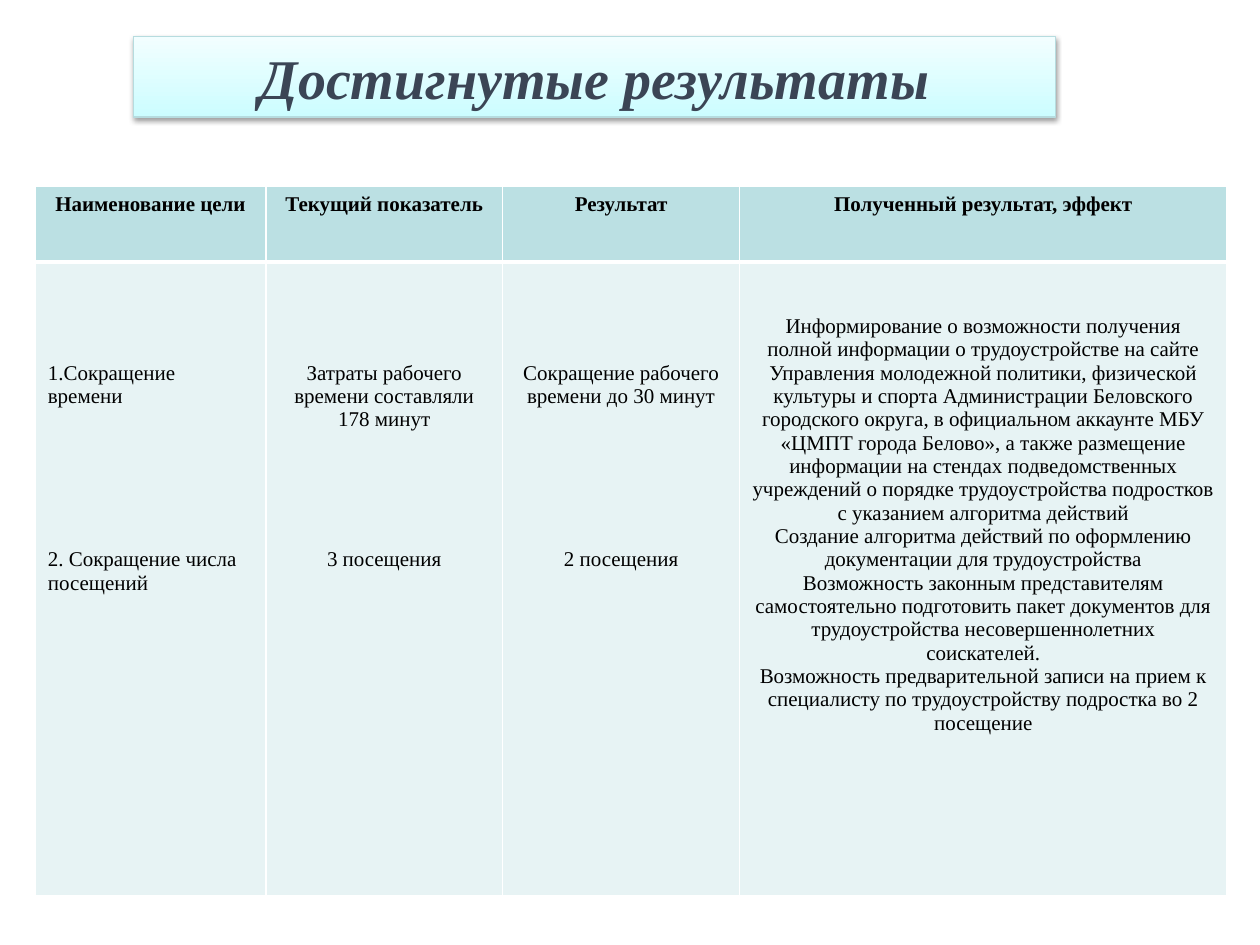
from lxml.etree import SubElement
from pptx import Presentation
from pptx.dml.color import RGBColor
from pptx.enum.shapes import MSO_SHAPE as Shape
from pptx.enum.text import MSO_ANCHOR as Anchor, PP_ALIGN as Align
from pptx.oxml.ns import qn
from pptx.util import Inches, Pt

FONT = "Times New Roman"
COLUMNS = (1.83, 1.88, 1.88, 3.87)
ROWS = (0.6, 5.03)
HEADERS = ("Наименование цели", "Текущий показатель", "Результат", "Полученный результат, эффект")
GOALS = (
    (Align.LEFT, 0.79, 80, ("1.Сокращение времени", "2. Сокращение числа посещений")),
    (Align.CENTER, 0.79, 66.7, ("Затраты рабочего времени составляли 178 минут", "3 посещения")),
    (Align.CENTER, 0.79, 80, ("Сокращение рабочего времени до 30 минут", "2 посещения")),
    (Align.CENTER, 0.42, 0, (
        "Информирование о возможности получения полной информации о трудоустройстве на сайте "
        "Управления молодежной политики, физической культуры и спорта Администрации Беловского "
        "городского округа, в официальном аккаунте МБУ «ЦМПТ города Белово», а также размещение "
        "информации на стендах подведомственных учреждений о порядке трудоустройства подростков "
        "с указанием алгоритма действий",
        "Создание алгоритма действий по оформлению документации для трудоустройства",
        "Возможность законным представителям самостоятельно подготовить пакет документов для "
        "трудоустройства несовершеннолетних соискателей.",
        "Возможность предварительной записи на прием к специалисту по трудоустройству подростка "
        "во 2 посещение")),
)


def color(value):
    return RGBColor.from_string(value)


def style(para, size, ink, bold=False, italic=False, align=Align.CENTER):
    para.alignment = align
    for span in para.runs:
        font = span.font
        font.name, font.size, font.bold, font.italic = FONT, Pt(size), bold, italic
        font.color.rgb = color(ink)


def add_shadow(shape):
    shape.shadow.inherit = False
    effects = shape._element.spPr.find(qn("a:effectLst"))
    shadow = SubElement(effects, qn("a:outerShdw"), blurRad=str(Pt(3.1)), dist=str(Pt(1.6)),
                        dir="5400000", rotWithShape="0")
    ink = SubElement(shadow, qn("a:srgbClr"), val="000000")
    SubElement(ink, qn("a:alpha"), val="38000")


def add_title(page, left, top, width, height):
    box = page.shapes.add_shape(Shape.RECTANGLE, *map(Inches, (left, top, width, height)))
    box.fill.gradient()
    box.fill.gradient_angle = 270
    for stop, shade in zip(box.fill.gradient_stops, ("F2FEFF", "CCFDFF")):
        stop.color.rgb = color(shade)
    for stop, position in zip(box.fill.gradient_stops, (0, 1)):
        stop.position = position
    box.line.color.rgb = color("B6DCDF")
    box.line.width = Pt(0.75)
    add_shadow(box)
    frame = box.text_frame
    frame.word_wrap = False
    frame.vertical_anchor = Anchor.MIDDLE
    frame.text = "Достигнутые результаты"
    style(frame.paragraphs[0], 32, "3B4555", bold=True, italic=True)


def paint_cell(cell, shade, bottom=1):
    properties = cell._tc.get_or_add_tcPr()
    for side, width in zip("LRTB", (1, 1, 1, bottom)):
        border = SubElement(properties, qn(f"a:ln{side}"), w=str(Pt(width)))
        SubElement(SubElement(border, qn("a:solidFill")), qn("a:srgbClr"), val="FFFFFF")
    cell.fill.solid()
    cell.fill.fore_color.rgb = color(shade)


def add_results(page, left, top):
    frame = page.shapes.add_table(len(ROWS), len(COLUMNS), Inches(left), Inches(top),
                                  Inches(sum(COLUMNS)), Inches(sum(ROWS)))
    table = frame.table
    for row, height in zip(table.rows, ROWS):
        row.height = Inches(height)
    for index, (width, header, goal) in enumerate(zip(COLUMNS, HEADERS, GOALS)):
        table.columns[index].width = Inches(width)
        head, body = table.cell(0, index), table.cell(1, index)
        paint_cell(head, "BBE0E3", bottom=3)
        head.text = header
        style(head.text_frame.paragraphs[0], 12, "000000", bold=True)
        align, margin, gap, texts = goal
        paint_cell(body, "E7F3F4")
        body.margin_top = Inches(margin)
        body.text = "\n".join(texts)
        for number, para in enumerate(body.text_frame.paragraphs):
            style(para, 12, "000000", align=align)
            if number:
                para.space_before = Pt(gap)


def main():
    deck = Presentation()
    deck.slide_width, deck.slide_height = Inches(10), Inches(7.5)
    page = deck.slides.add_slide(deck.slide_layouts[6])
    add_title(page, 1.06, 0.29, 7.32, 0.64)
    add_results(page, 0.28, 1.48)
    deck.save("out.pptx")


if __name__ == "__main__":
    main()
